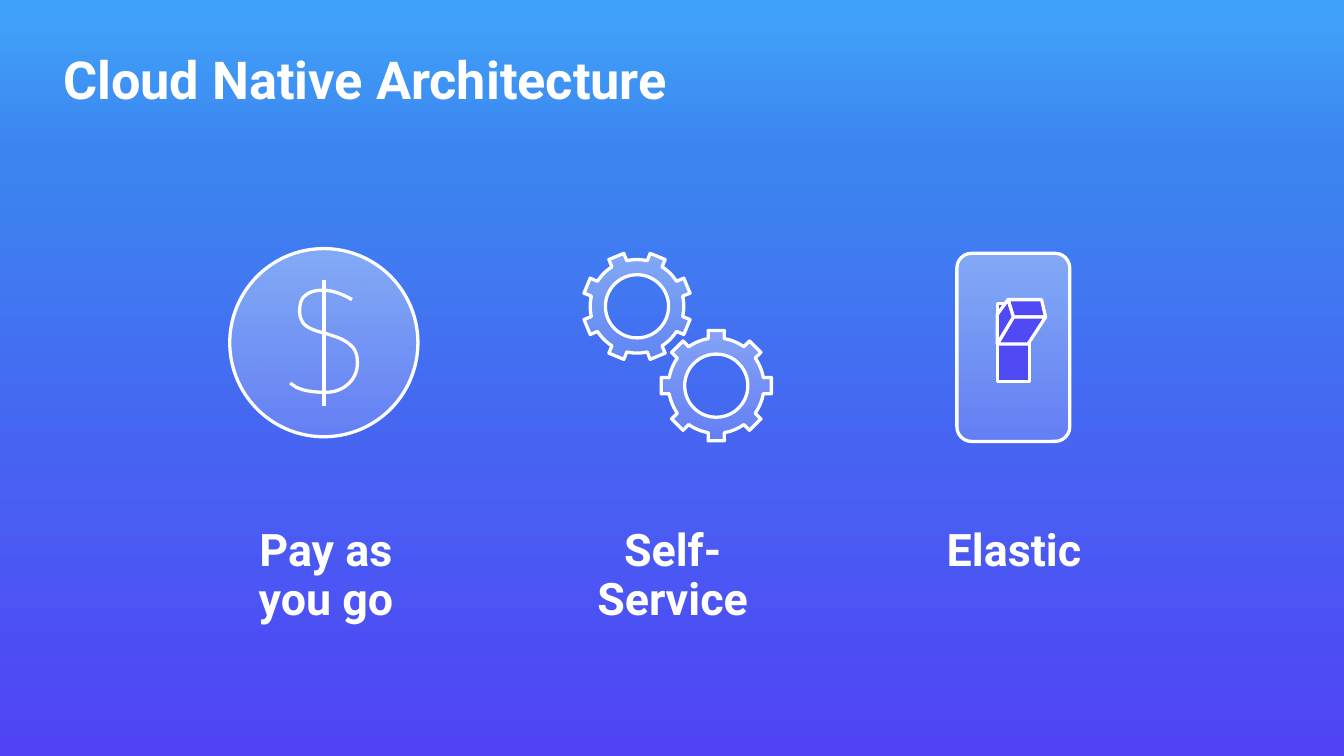
"""Build the cloud native architecture slide with three icons and captions."""
from dataclasses import dataclass
from math import cos, hypot, pi, sin

from lxml import etree
from pptx import Presentation
from pptx.dml.color import RGBColor
from pptx.enum.shapes import MSO_CONNECTOR, MSO_SHAPE
from pptx.enum.text import MSO_ANCHOR, PP_ALIGN
from pptx.oxml.ns import qn
from pptx.util import Inches, Pt

RECTANGLE = MSO_SHAPE.RECTANGLE
ROUNDED = MSO_SHAPE.ROUNDED_RECTANGLE
OVAL = MSO_SHAPE.OVAL
STRAIGHT = MSO_CONNECTOR.STRAIGHT
TOP = MSO_ANCHOR.TOP
LEFT, CENTER = PP_ALIGN.LEFT, PP_ALIGN.CENTER

WHITE = RGBColor(0xFF, 0xFF, 0xFF)
INDIGO = RGBColor(0x4F, 0x4A, 0xF4)
SKY = RGBColor(0x40, 0xA1, 0xF8)
BLUE = RGBColor(0x3C, 0x85, 0xF0)
VIOLET = RGBColor(0x51, 0x43, 0xF5)

FONT = "Roboto"
STROKE = Pt(1.75)
SLIDE_WIDTH = Inches(10)
SLIDE_HEIGHT = SLIDE_WIDTH * 9 // 16
GRID_COLUMNS = 1000
CELL = SLIDE_WIDTH / GRID_COLUMNS
TEETH = 8
CURVE_STEPS = 8

Point = tuple[float, float]


@dataclass(frozen=True)
class Stop:
    position: int
    color: RGBColor
    opacity: int = 100


@dataclass(frozen=True)
class Gear:
    column: float
    row: float
    turn: float
    root: float
    tip: float
    half_tooth: float = 6
    hole: float = 23.5


@dataclass(frozen=True)
class Caption:
    text: str
    column: float


BACKDROP = (Stop(2, SKY), Stop(20, BLUE), Stop(100, VIOLET))
GLASS = (Stop(2, WHITE, 35), Stop(100, WHITE, 16))
GEARS = (Gear(533, 287, 0, 35.5, 41), Gear(474, 228, pi / TEETH, 34.8, 40.2))
CAPTIONS = (Caption("Pay as you go", 164), Caption("Self-Service", 422), Caption("Elastic", 676))
BOX_FACES = (
    ((750, 223), (775, 223), (778, 236), (754, 236)),
    ((778, 236), (765, 256), (742, 256), (754, 236)),
    ((750, 223), (742, 234), (742, 256), (754, 236)),
)
DOLLAR_CURVE = (
    (262, 223), (255, 219), (248, 216), (240, 216), (235, 216), (230, 217), (226, 221),
    (224, 223), (223, 227), (223, 232), (223, 235), (224, 238), (226, 241),
    (231, 246), (239, 247), (245, 249), (251, 251), (258, 253), (263, 259),
    (265, 262), (266, 265), (266, 270), (266, 276), (264, 281), (260, 285),
    (255, 290), (249, 292), (242, 292), (234, 292), (226, 291), (220, 288),
    (219, 287), (217, 286), (216, 285),
)


def grid(*lengths: float) -> list[int]:
    """Turn grid cells into slide lengths."""
    return [round(length * CELL) for length in lengths]


def fill_gradient(shape, stops: tuple[Stop, ...]) -> None:
    """Fill a shape from top to bottom."""
    shape.fill.gradient()
    shape.fill.gradient_angle = 270
    stop_list = shape._element.spPr.find(qn("a:gradFill")).find(qn("a:gsLst"))
    stop_list.clear()
    for stop in stops:
        entry = etree.SubElement(stop_list, qn("a:gs"), pos=str(stop.position * 1000))
        color = etree.SubElement(entry, qn("a:srgbClr"), val=str(stop.color))
        if stop.opacity < 100:
            etree.SubElement(color, qn("a:alpha"), val=str(stop.opacity * 1000))


def style(shape, fill: RGBColor | tuple[Stop, ...] | None) -> None:
    """Give an icon part its fill and white outline."""
    shape.shadow.inherit = False
    if fill is None:
        shape.fill.background()
    elif isinstance(fill, RGBColor):
        shape.fill.solid()
        shape.fill.fore_color.rgb = fill
    else:
        fill_gradient(shape, fill)
    shape.line.color.rgb = WHITE
    shape.line.width = STROKE


def draw_outline(slide, contours: list[list[Point]], fill, close: bool = True) -> None:
    """Draw one freeform from one or more contours."""
    points = [[grid(*point) for point in contour] for contour in contours]
    builder = slide.shapes.build_freeform(*points[0][0], scale=1.0)
    builder.add_line_segments(points[0][1:], close=close)
    for contour in points[1:]:
        builder.move_to(*contour[0])
        builder.add_line_segments(contour[1:], close=close)
    style(builder.convert_to_shape(), fill)


def trace_curve(points: tuple[Point, ...]) -> list[Point]:
    """Sample a chain of cubic curves."""
    traced = [points[0]]
    for first in range(0, len(points) - 1, 3):
        for step in range(1, CURVE_STEPS + 1):
            t = step / CURVE_STEPS
            weights = ((1 - t) ** 3, 3 * t * (1 - t) ** 2, 3 * t**2 * (1 - t), t**3)
            corners = points[first:first + 4]
            traced.append(tuple(sum(w * p[axis] for w, p in zip(weights, corners)) for axis in (0, 1)))
    return traced


def draw_gear(slide, gear: Gear) -> None:
    """Draw a toothed ring with a round hole."""
    def polar(radius: float, angle: float) -> Point:
        return gear.column + radius * sin(angle), gear.row - radius * cos(angle)

    pitch = 2 * pi / TEETH
    root_angle = gear.half_tooth / gear.root
    tip_angle = gear.half_tooth / gear.tip
    tip = hypot(gear.tip, gear.half_tooth)
    valley = pitch - 2 * root_angle
    rim = []
    for tooth in range(TEETH):
        middle = gear.turn + tooth * pitch
        rim += [polar(tip, middle - tip_angle), polar(tip, middle + tip_angle)]
        rim += [polar(gear.root, middle + root_angle + valley * step / CURVE_STEPS)
                for step in range(CURVE_STEPS + 1)]
    sides = TEETH * CURVE_STEPS
    hole = [polar(gear.hole, -2 * pi * side / sides) for side in range(sides)]
    draw_outline(slide, [rim, hole], GLASS)


def draw_shape(slide, kind, left: float, top: float, width: float, height: float, fill):
    """Draw a preset icon part."""
    shape = slide.shapes.add_shape(kind, *grid(left, top, width, height))
    style(shape, fill)
    return shape


def write(shape, text: str, size: int, alignment, spacing: float) -> None:
    """Set bold white text."""
    frame = shape.text_frame
    frame.word_wrap = True
    frame.vertical_anchor = TOP
    frame.text = text
    paragraph = frame.paragraphs[0]
    paragraph.alignment = alignment
    paragraph.line_spacing = spacing
    font = paragraph.font
    font.name, font.size, font.bold = FONT, Pt(size), True
    font.color.rgb = WHITE


def main() -> None:
    """Build and save the slide."""
    presentation = Presentation()
    presentation.slide_width, presentation.slide_height = SLIDE_WIDTH, SLIDE_HEIGHT
    slide = presentation.slides.add_slide(presentation.slide_layouts[5])

    backdrop = slide.shapes.add_shape(RECTANGLE, 0, 0, SLIDE_WIDTH, SLIDE_HEIGHT)
    backdrop.shadow.inherit = False
    fill_gradient(backdrop, BACKDROP)
    backdrop.line.fill.background()
    slide.shapes._spTree.insert(2, backdrop._element)

    title = slide.shapes.title
    title.left, title.top, title.width, title.height = grid(37, 30, 897, 60)
    write(title, "Cloud Native Architecture", 28, LEFT, 1.0)

    phone = draw_shape(slide, ROUNDED, 712, 188.5, 84, 140, GLASS)
    phone.adjustments[0] = 0.13
    draw_shape(slide, RECTANGLE, 742, 226, 24, 58, INDIGO)
    for face in BOX_FACES:
        draw_outline(slide, [face], INDIGO)

    for gear in GEARS:
        draw_gear(slide, gear)

    draw_outline(slide, [trace_curve(DOLLAR_CURVE)], None, close=False)
    bar = slide.shapes.add_connector(STRAIGHT, *grid(241, 208, 241, 302))
    bar.line.color.rgb = WHITE
    bar.line.width = STROKE
    etree.SubElement(bar._element.spPr, qn("a:effectLst"))
    draw_shape(slide, OVAL, 171, 185, 140, 140, GLASS)

    for caption in CAPTIONS:
        box = slide.shapes.add_textbox(*grid(caption.column, 388, 157, 43))
        write(box, caption.text, 24, CENTER, 0.9)

    presentation.save("out.pptx")


if __name__ == "__main__":
    main()
